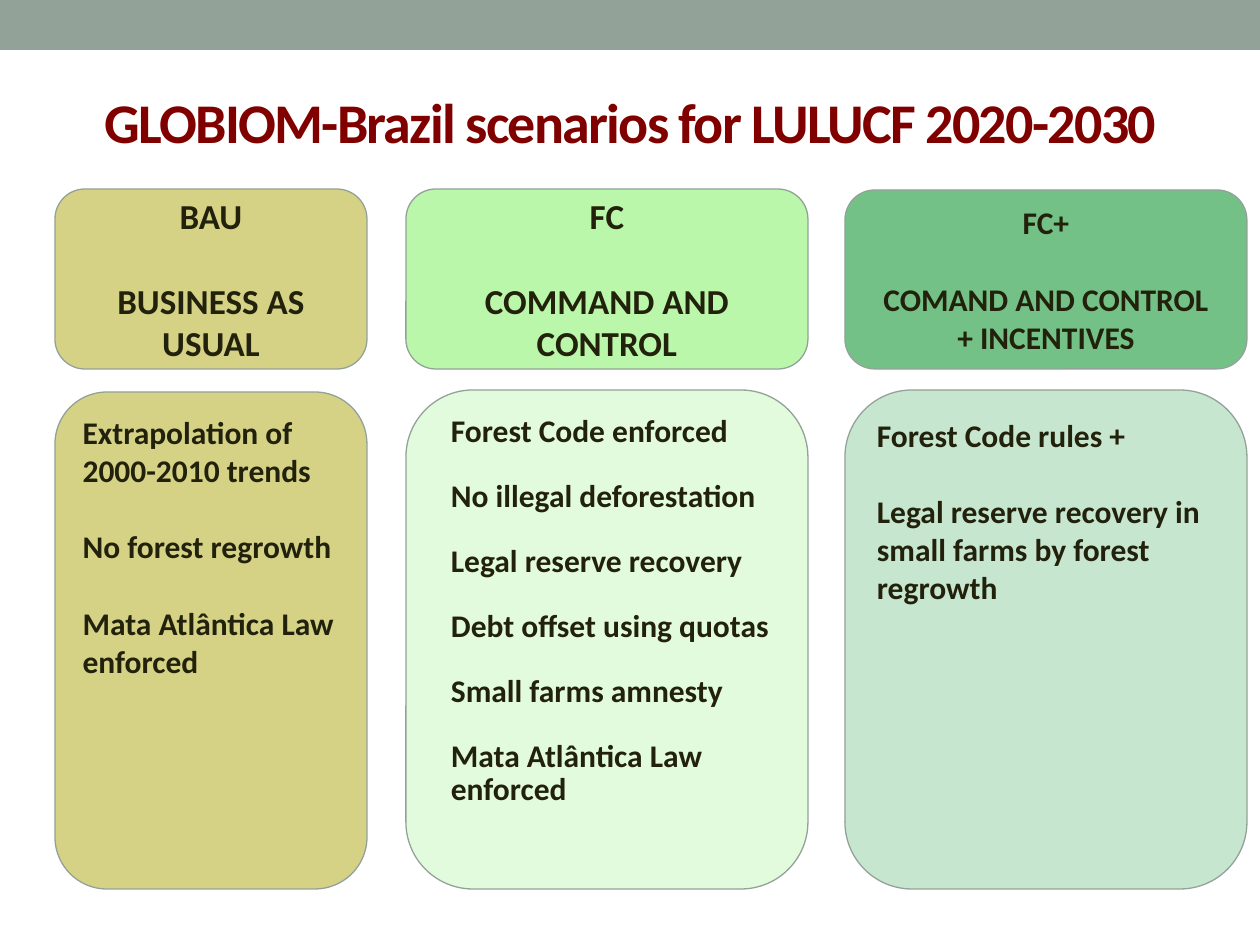
from pptx import Presentation
from pptx import util as u
from pptx.dml.color import RGBColor
from pptx.enum import shapes, text
from pptx.oxml import parse_xml
from pptx.oxml.ns import nsdecls

PX = 914400 / 126  # EMU per px
FONT = "Calibri"
COLORS = {
    "band": "93A299", "title": "800000", "ink": "22210C",
    "bau": "D5D286", "fc": "BAF7AA", "fc_plus": "74C187",
}
HEADER_TOP, HEADER_HEIGHT = 189, 180
BODY_TOP, BODY_BOTTOM = 390, 889

# Each scenario: place, colour, opacity of the body, header and body text
SCENARIOS = [
    dict(left=55, width=312, color="bau", opacity=100, header_size=20,
         header=["BAU", "BUSINESS AS USUAL"],
         body=["Extrapolation of 2000-2010 trends", "No forest regrowth",
               "Mata Atlântica Law enforced"],
         body_top=392),
    dict(left=406, width=402, color="fc", opacity=40, header_size=20,
         header=["FC", "COMMAND AND CONTROL"],
         body=["Forest Code enforced", "No illegal deforestation",
               "Legal reserve recovery", "Debt offset using quotas",
               "Small farms amnesty", "Mata Atlântica Law enforced"],
         line_spacing=18.6, indent=13),
    dict(left=845, width=402, color="fc_plus", opacity=40, header_size=18,
         header=["FC+", "COMAND AND CONTROL", "+ INCENTIVES"],
         body=["Forest Code rules +",
               "Legal reserve recovery in small farms by forest regrowth"],
         header_top=190),
]


def px(value):
    return u.Emu(round(value * PX))


def rgb(name):
    return RGBColor.from_string(COLORS[name])


def add_run(paragraph, words, size, color):
    run = paragraph.add_run()
    run.text = words
    run.font.name = FONT
    run.font.size = u.Pt(size)
    run.font.bold = True
    run.font.color.rgb = rgb(color)
    return run


def add_box(slide, kind, left, top, width, height, color, opacity=100):
    shape = slide.shapes.add_shape(kind, px(left), px(top), px(width), px(height))
    shape.shadow.inherit = False
    shape.fill.solid()
    shape.fill.fore_color.rgb = rgb(color)
    if opacity < 100:
        fill_color = shape.fill._xPr.solidFill[0]
        fill_color.append(parse_xml(
            f'<a:alpha {nsdecls("a")} val="{opacity * 1000}"/>'))
    shape.line.color.rgb = rgb("band")
    shape.line.width = u.Pt(0.75)
    return shape


def write_lines(shape, lines, size, gaps, align, anchor, line_spacing=None, indent=0):
    """Write one paragraph per line, with the space in points before each."""
    frame = shape.text_frame
    frame.word_wrap = True
    frame.vertical_anchor = anchor
    for index, (words, gap) in enumerate(zip(lines, gaps)):
        paragraph = frame.add_paragraph() if index else frame.paragraphs[0]
        paragraph.alignment = align
        if gap:
            paragraph.space_before = u.Pt(gap)
        if line_spacing:
            paragraph.line_spacing = u.Pt(line_spacing)
        if indent:
            paragraph._p.get_or_add_pPr().set("marL", str(px(indent)))
        add_run(paragraph, words, size, "ink")


def add_title(slide, words):
    title = slide.shapes.title
    title.left, title.top, title.width, title.height = map(px, (26, 53, 1208, 136))
    frame = title.text_frame
    frame.auto_size = text.MSO_AUTO_SIZE.NONE
    frame.vertical_anchor = text.MSO_ANCHOR.MIDDLE
    paragraph = frame.paragraphs[0]
    paragraph.alignment = text.PP_ALIGN.CENTER
    run = add_run(paragraph, words, 32, "title")
    run.font._element.set("spc", "-100")


def add_scenario(slide, scenario):
    rounded = shapes.MSO_SHAPE.ROUNDED_RECTANGLE
    left, width, color = (scenario[key] for key in ("left", "width", "color"))

    # Header: a gap of one line after the short name only
    top = scenario.get("header_top", HEADER_TOP)
    header = add_box(slide, rounded, left, top, width,
                     HEADER_TOP + HEADER_HEIGHT - top, color)
    size = scenario["header_size"]
    write_lines(header, scenario["header"], size, [0, size * 1.22, 0],
                text.PP_ALIGN.CENTER, text.MSO_ANCHOR.MIDDLE)

    # Body: a gap of one line between all paragraphs
    top = scenario.get("body_top", BODY_TOP)
    body = add_box(slide, rounded, left, top, width, BODY_BOTTOM - top,
                   color, scenario["opacity"])
    lines = scenario["body"]
    spacing = scenario.get("line_spacing")
    gap = spacing or 18 * 1.22
    write_lines(body, lines, 18, [0] + [gap] * (len(lines) - 1),
                text.PP_ALIGN.LEFT, text.MSO_ANCHOR.TOP,
                spacing, scenario.get("indent", 0))


def main():
    presentation = Presentation()
    presentation.slide_width, presentation.slide_height = px(1260), px(945)
    slide = presentation.slides.add_slide(presentation.slide_layouts[5])

    # Top band
    band = add_box(slide, shapes.MSO_SHAPE.RECTANGLE, 0, 0, 1260, 50, "band")
    band.line.fill.background()

    # Scenario columns
    for scenario in SCENARIOS:
        add_scenario(slide, scenario)

    add_title(slide, "GLOBIOM-Brazil scenarios for LULUCF 2020-2030")
    presentation.save("out.pptx")


if __name__ == "__main__":
    main()
